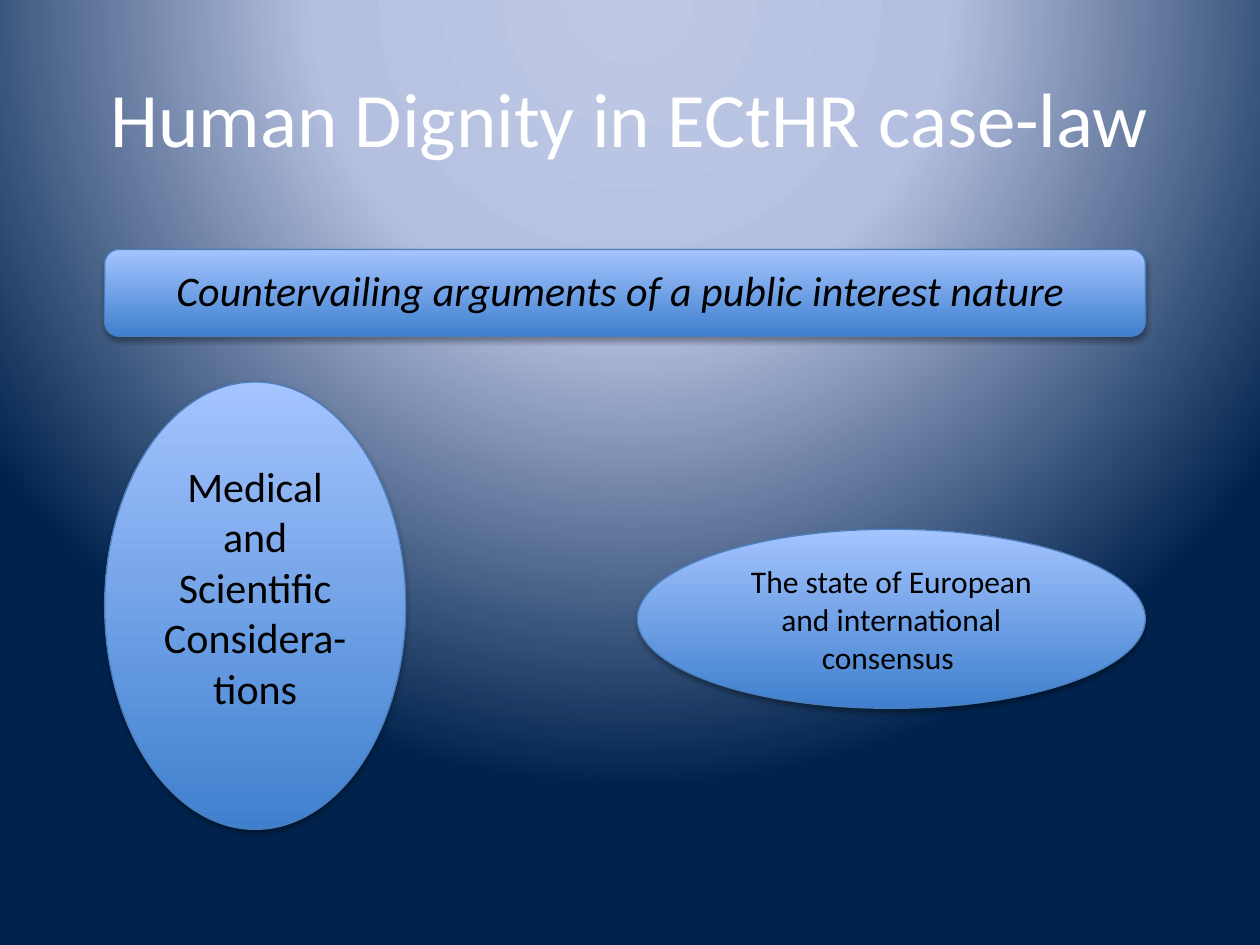
"""Build a slide on countervailing arguments in human dignity case-law."""
from lxml.etree import fromstring
from pptx import Presentation
from pptx.dml.color import RGBColor as RGB
from pptx.enum.shapes import MSO_SHAPE as SHAPE
from pptx.enum.text import MSO_ANCHOR as ANCHOR, PP_ALIGN as ALIGN
from pptx.oxml.ns import qn
from pptx.util import Cm, Pt

NS = 'xmlns:a="http://schemas.openxmlformats.org/drawingml/2006/main"'
COLORS = {
    "glow": "BFC9E5", "haze": "B5C0E0", "navy": "00234D",
    "bottom": "3F80CE", "top": "A4C4FF", "line": "4B7EBC",
    "title": "FFFFFF", "text": "000000",
}
SHADOW = f"""<a:outerShdw {NS} blurRad="40000" dist="23000" dir="5400000" rotWithShape="0">
<a:srgbClr val="{COLORS['text']}"><a:alpha val="35000"/></a:srgbClr></a:outerShdw>"""
BACKDROP = f"""<a:gradFill {NS} rotWithShape="1"><a:gsLst>
<a:gs pos="0"><a:srgbClr val="{COLORS['glow']}"/></a:gs>
<a:gs pos="40000"><a:srgbClr val="{COLORS['haze']}"/></a:gs>
<a:gs pos="100000"><a:srgbClr val="{COLORS['navy']}"/></a:gs></a:gsLst>
<a:path path="circle"><a:fillToRect l="50000" t="-80000" r="50000" b="180000"/></a:path>
</a:gradFill>"""


def write(tf, lines, color, **font):
    tf.word_wrap = True
    tf.vertical_anchor = ANCHOR.MIDDLE
    for i, line in enumerate(lines):
        p = tf.paragraphs[0] if i == 0 else tf.add_paragraph()
        p.alignment = ALIGN.CENTER
        r = p.add_run()
        r.text = line
        r.font.color.rgb = RGB.from_string(COLORS[color])
        for name, value in {"name": "Calibri", **font}.items():
            setattr(r.font, name, value)


prs = Presentation()
prs.slide_width, prs.slide_height = Cm(25.4), Cm(19.05)
slide = prs.slides.add_slide(prs.slide_layouts[5])

fill = slide.background.fill
fill.gradient()
grad = slide.element.find(".//" + qn("p:bgPr")).find(qn("a:gradFill"))
grad.getparent().replace(grad, fromstring(BACKDROP))

title = slide.shapes.title
box = {"left": 1.27, "top": 0.76, "width": 22.86, "height": 3.18}
for name, value in box.items():
    setattr(title, name, Cm(value))
write(title.text_frame, ["Human Dignity in ECtHR case-law"], "title", size=Pt(44))

ARGUMENTS = [
    (SHAPE.ROUNDED_RECTANGLE, (2.11, 5.03, 20.98, 1.75), 0.25,
     ["Countervailing arguments of a public interest nature "],
     {"size": Pt(24), "italic": True}),
    (SHAPE.OVAL, (2.11, 7.7, 6.07, 9.02), 0.9,
     ["Medical and Scientific", "Considera-tions"], {"size": Pt(24)}),
    (SHAPE.OVAL, (12.85, 10.67, 10.24, 3.61), 0.13,
     ["The state of European and international consensus "], {"size": Pt(18)}),
]
for kind, place, inset, lines, font in ARGUMENTS:
    sp = slide.shapes.add_shape(kind, *map(Cm, place))
    sp.fill.gradient()
    sp.fill.gradient_angle = 90
    for stop, name in zip(sp.fill.gradient_stops, ("bottom", "top")):
        stop.color.rgb = RGB.from_string(COLORS[name])
    sp.line.color.rgb = RGB.from_string(COLORS["line"])
    sp.line.width = Pt(0.75)
    sp.shadow.inherit = False
    sp.element.spPr.find(qn("a:effectLst")).append(fromstring(SHADOW))
    sp.text_frame.margin_bottom = Cm(inset)
    write(sp.text_frame, lines, "text", **font)

prs.save("out.pptx")
